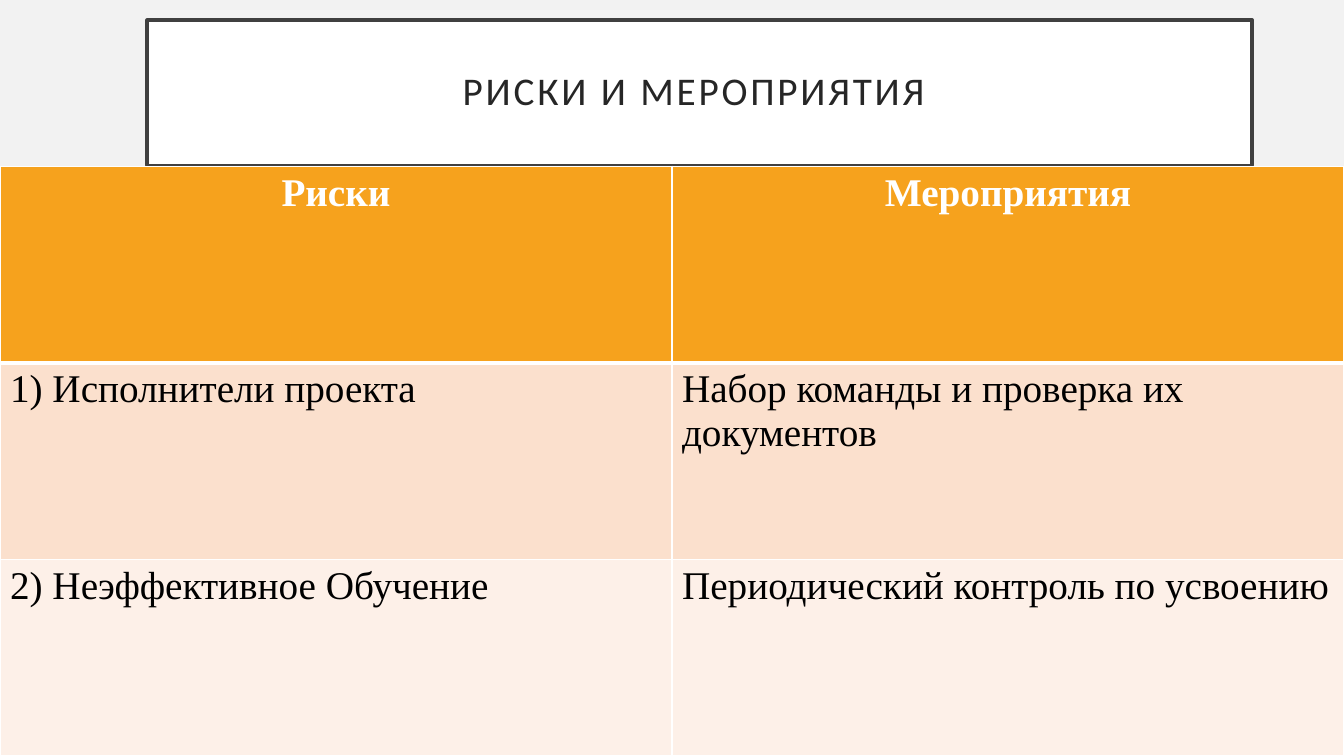
from lxml import etree
from pptx import Presentation
from pptx import util as u
from pptx.dml.color import RGBColor
from pptx.enum import shapes, text
from pptx.oxml import ns

INK = {"back": "F2F2F2", "white": "FFFFFF", "frame": "404040", "title": "262626",
       "head": "F6A21D", "odd": "FBE0CD", "even": "FDF0E8", "body": "000000"}
ROWS = [("Риски", "Мероприятия"),
        ("1) Исполнители проекта", "Набор команды и проверка их документов"),
        ("2) Неэффективное Обучение", "Периодический контроль по усвоению")]
FILLS = ["head", "odd", "even"]


def paint(fill, name):
    """Fill with one named colour."""
    fill.solid()
    fill.fore_color.rgb = RGBColor.from_string(INK[name])


def style(para, face, name, bold=False, center=False):
    """Format a paragraph and its run."""
    para.alignment = text.PP_ALIGN.CENTER if center else text.PP_ALIGN.LEFT
    font = para.runs[0].font
    font.name, font.size, font.bold = face, u.Pt(28), bold
    font.color.rgb = RGBColor.from_string(INK[name])


def add_title(slide, words):
    """Add the framed title."""
    box = slide.shapes.add_shape(shapes.MSO_SHAPE.RECTANGLE, u.Inches(1.46),
                                 u.Inches(0.2), u.Inches(10.96), u.Inches(1.44))
    box.shadow.inherit = False
    paint(box.fill, "white")
    paint(box.line.fill, "frame")
    box.line.width = u.Pt(2.5)
    frame = box.text_frame
    frame.text = words
    frame.word_wrap = True
    frame.vertical_anchor = text.MSO_ANCHOR.MIDDLE
    frame.margin_left = frame.margin_right = u.Inches(0.2)
    frame.margin_top = frame.margin_bottom = u.Inches(0.2)
    para = frame.paragraphs[0]
    para.line_spacing = 0.9
    style(para, "Calibri", "title", center=True)
    para.runs[0].font._element.set("spc", "200")


def add_edge(cell, side, width):
    """Draw one white cell border."""
    props = cell._tc.get_or_add_tcPr()
    line = etree.SubElement(props, ns.qn("a:ln" + side), w=str(u.Pt(width)))
    fill = etree.SubElement(line, ns.qn("a:solidFill"))
    etree.SubElement(fill, ns.qn("a:srgbClr"), val=INK["white"])


def add_grid(slide, rows):
    """Add the table of risks and measures."""
    grid = slide.shapes.add_table(len(rows), len(rows[0]), 0, u.Inches(1.65),
                                  u.Inches(13.33), u.Inches(5.85)).table
    grid.horz_banding = False
    for r, row in enumerate(rows):
        head = r == 0
        for c, words in enumerate(row):
            cell = grid.cell(r, c)
            cell.text = words
            style(cell.text_frame.paragraphs[0], "Times New Roman",
                  "white" if head else "body", head, head)
            for side in "LRTB":
                thick = (r, side) in [(0, "B"), (1, "T")]
                add_edge(cell, side, 3 if thick else 1)
            paint(cell.fill, FILLS[r])


def main():
    """Build and save the slide."""
    deck = Presentation()
    deck.slide_width, deck.slide_height = u.Inches(13.33), u.Inches(7.5)
    slide = deck.slides.add_slide(deck.slide_layouts[6])
    paint(slide.background.fill, "back")
    add_title(slide, "РИСКИ И МЕРОПРИЯТИЯ ")
    add_grid(slide, ROWS)
    deck.save("out.pptx")


if __name__ == "__main__":
    main()
